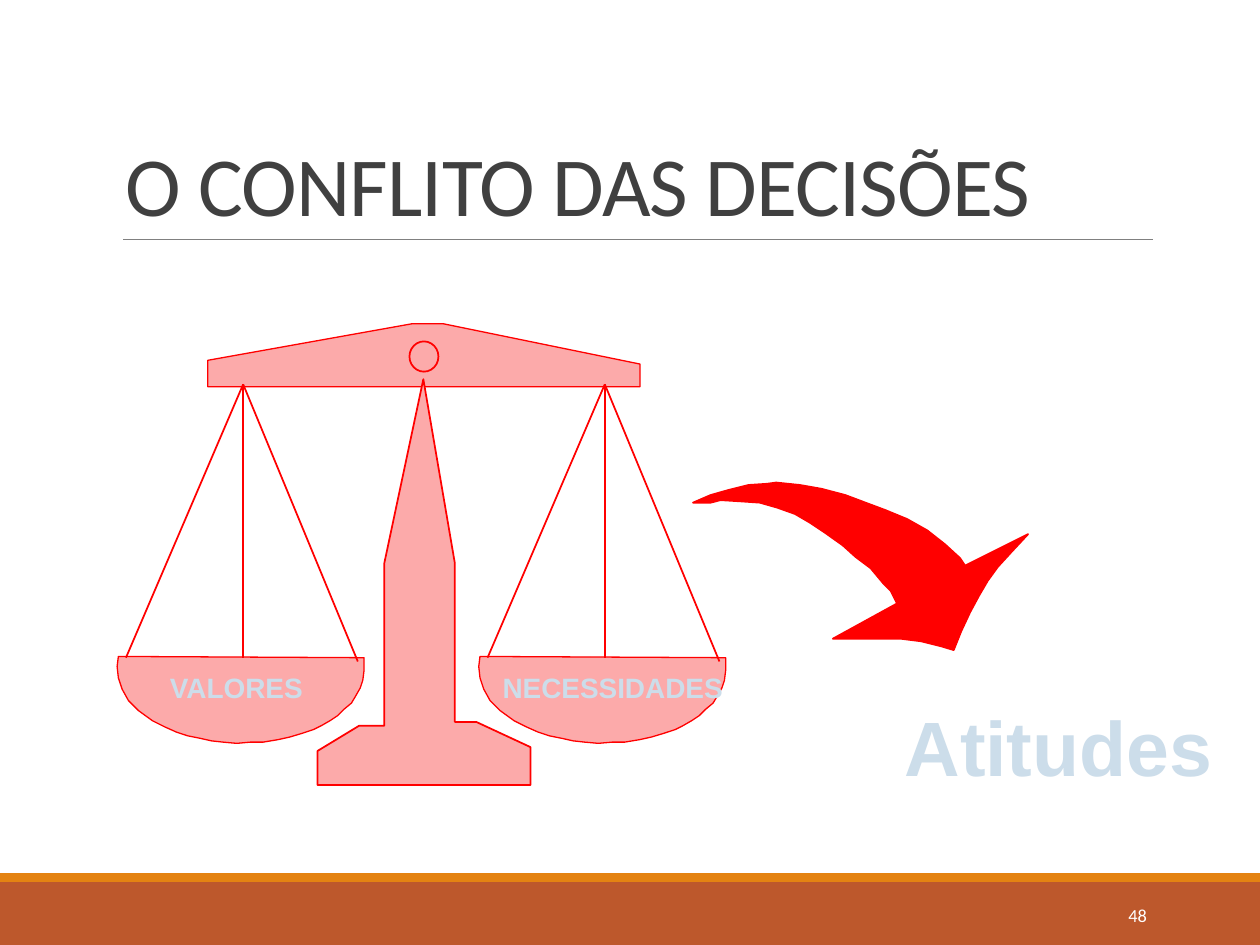
from lxml.etree import SubElement
from pptx import Presentation
from pptx.dml.color import RGBColor
from pptx.enum.shapes import MSO_CONNECTOR as Connector, MSO_SHAPE as Preset
from pptx.enum.text import MSO_ANCHOR as Anchor, PP_ALIGN as Align
from pptx.oxml.ns import qn
from pptx.util import Inches, Pt

COL = ROW = Inches(0.1)
RED, PINK, PALE = "FF0000", "FCAAAA", "CCDDEA"


def paint(shape, fill, line=None, width=1):
    shape.shadow.inherit = False
    shape.fill.solid()
    shape.fill.fore_color.rgb = RGBColor.from_string(fill)
    if line:
        shape.line.color.rgb = RGBColor.from_string(line)
        shape.line.width = Pt(width)
    else:
        shape.line.fill.background()


def write(text, place, size, font, colour, frame_format, para_format, bold=False):
    left, top, width, height = place
    box = page.shapes.add_textbox(int(left * COL), int(top * ROW), int(width * COL), int(height * ROW))
    para = box.text_frame.paragraphs[0]
    span = para.add_run()
    span.text = text
    span.font.color.rgb = RGBColor.from_string(colour)
    formats = {"size": Pt(size), "name": font, "bold": bold}
    for target, values in ((box.text_frame, frame_format), (para, para_format), (span.font, formats)):
        for name, value in values.items():
            setattr(target, name, value)
    return span


deck = Presentation()
deck.slide_width, deck.slide_height = 100 * COL, 75 * ROW
page = deck.slides.add_slide(deck.slide_layouts[6])

beam = [(16.5, 30.7), (50.8, 30.7), (50.8, 28.9), (35.2, 25.7), (32.7, 25.7), (16.5, 28.6)]
pillar = [
    (33.6, 30.1), (36.1, 44.7), (36.1, 57.3), (37.8, 57.3), (42.1, 59.3), (42.1, 62.3),
    (25.2, 62.3), (25.2, 59.6), (28.5, 57.6), (30.5, 57.6), (30.5, 44.7),
]
pan = [
    (9.4, 52.1), (9.3, 52.9), (9.4, 53.8), (9.7, 54.7), (10.2, 55.6), (11, 56.4), (12.1, 57.2),
    (13.1, 57.7), (14, 58.1), (14.9, 58.4), (15.9, 58.6), (16.8, 58.8), (17.7, 58.9), (18.8, 59),
    (19.9, 58.9), (20.9, 58.9), (22.1, 58.7), (23, 58.5), (24, 58.2), (24.9, 57.9), (25.5, 57.6),
    (26.2, 57.2), (26.8, 56.8), (27.3, 56.3), (27.9, 55.8), (28.2, 55.3), (28.6, 54.6),
    (28.8, 54), (28.9, 53.2), (28.9, 52.2),
]
arrow = [
    (55, 39.9), (56.4, 39.3), (57.8, 38.9), (59.4, 38.5), (60.9, 38.4), (61.6, 38.3), (63.5, 38.5),
    (65.2, 38.8), (67.1, 39.3), (68.7, 39.9), (70.3, 40.5), (72, 41.2), (73.6, 42.1), (75, 43.2),
    (76.2, 44.3), (76.6, 44.9), (81.6, 42.4), (80.3, 43.8), (79.2, 45), (78.4, 46.1), (77.7, 47.3),
    (77, 48.6), (76.3, 50.1), (75.7, 51.6), (74.7, 51.3), (73.1, 50.9), (71.5, 50.7), (69.7, 50.7),
    (66.1, 50.7), (71.2, 47.9), (70.7, 46.9), (70.1, 46.3), (69.1, 45.1), (67.9, 44.2), (66.9, 43.3),
    (65.5, 42.3), (64.3, 41.5), (63.1, 40.8), (61.7, 40.3), (60.3, 39.9), (58.8, 39.8), (57.2, 39.7),
    (56.4, 39.9),
]

for top, height, fill in ((70, 5, "BD582C"), (69.3, 0.7, "E48312")):
    band = page.shapes.add_shape(Preset.RECTANGLE, 0, int(top * ROW), 100 * COL, int(height * ROW))
    paint(band, fill)

pan_gap = 28.7
right_pan = [(x + pan_gap, y) for x, y in pan]
for outline, fill, width in (
    (beam, PINK, 0.75), (pillar, PINK, 1), (pan, PINK, 0.75), (right_pan, PINK, 0.75), (arrow, RED, 1),
):
    points = [(round(x * 10), round(y * 10)) for x, y in outline]
    builder = page.shapes.build_freeform(*points[0], scale=COL / 10)
    builder.add_line_segments(points[1:], close=True)
    paint(builder.convert_to_shape(), fill, RED, width)

pivot = page.shapes.add_shape(Preset.OVAL, int(32.5 * COL), int(27.1 * ROW), int(2.3 * COL), int(2.4 * ROW))
paint(pivot, PINK, RED)

lines = [(9.8, 19, 91.5, 19, "808080", 0.5)]
for hook in (19.3, 19.3 + pan_gap):
    for reach, bottom in ((9.1, 52.5), (0, 52.2), (-9.3, 52.2)):
        lines.append((hook, 30.5, hook + reach, bottom, RED, 1))
for x1, y1, x2, y2, colour, width in lines:
    line = page.shapes.add_connector(
        Connector.STRAIGHT, int(x1 * COL), int(y1 * ROW), int(x2 * COL), int(y2 * ROW)
    )
    line.line.color.rgb = RGBColor.from_string(colour)
    line.line.width = Pt(width)
    SubElement(line.element.spPr, qn("a:effectLst"))

title = write(
    "O CONFLITO DAS DECISÕES", (9, 3.1, 82.5, 15.9), 48, "Calibri", "404040",
    {"word_wrap": True, "vertical_anchor": Anchor.BOTTOM}, {"line_spacing": 0.85},
)
title._r.get_or_add_rPr().set("spc", "-50")
write(
    "48", (81.2, 70.6, 10.8, 4), 10.5, "Calibri", "FFFFFF",
    {"word_wrap": True, "vertical_anchor": Anchor.MIDDLE}, {"alignment": Align.RIGHT},
)
for text, place, size, before in (
    ("VALORES", (12.5, 52.7, 15, 3.7), 16, 0),
    ("NECESSIDADES", (38.9, 52.7, 19.5, 3.7), 16, 0),
    ("Atitudes", (70.8, 55, 26.7, 8.4), 44, 3),
):
    write(text, place, size, "Arial", PALE, {"word_wrap": False}, {"space_before": Pt(before)}, True)

deck.save("out.pptx")
